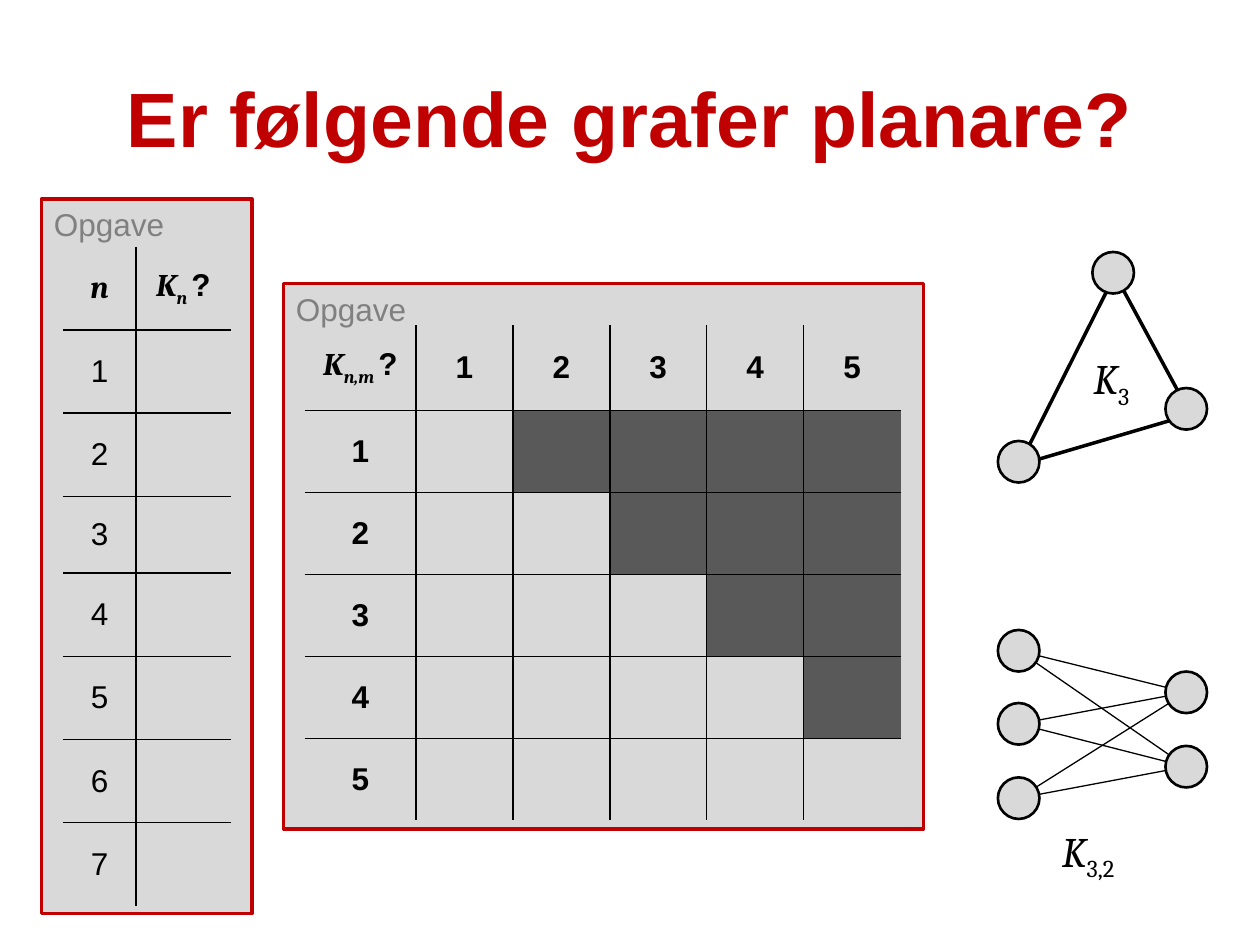
from itertools import product

from lxml.etree import SubElement
from pptx import Presentation
from pptx.dml.color import RGBColor
from pptx.enum.shapes import MSO_CONNECTOR, MSO_SHAPE
from pptx.enum.text import MSO_ANCHOR, PP_ALIGN
from pptx.oxml.ns import qn
from pptx.util import Inches, Pt

RED = RGBColor(0xC0, 0x00, 0x00)
BLACK = RGBColor(0x00, 0x00, 0x00)
LIGHT = RGBColor(0xD9, 0xD9, 0xD9)
GREY = RGBColor(0x80, 0x80, 0x80)
DARK = RGBColor(0x59, 0x59, 0x59)

TITLE = "Er følgende grafer planare?"
PANEL_LABEL = "Opgave"
PANELS = [(2.25, 2.25, 5.08, 4.33), (0.33, 1.58, 1.67, 5.67)]

# A cell is a list of (text, style) spans; styles: b bold, m math, s subscript
COMPLETE_ROWS = [[[("n", "bm")], [("K", "bm"), ("n ", "bms"), ("?", "b")]]]
COMPLETE_ROWS += [[[(str(n), "")], []] for n in range(1, 8)]
BIPARTITE_ROWS = [[[("K", "bm"), ("n,m ", "bms"), ("?", "b")]]
                  + [[(str(m), "b")] for m in range(1, 6)]]
BIPARTITE_ROWS += [[[(str(n), "b")]] + [[]] * 5 for n in range(1, 6)]

NODE_SIZE = 0.33
TRIANGLE = [(8.09, 3.69), (8.85, 2.18), (9.45, 3.29)]
TRIANGLE_NODES = [(8.67, 2), (9.25, 3.08), (7.92, 3.5)]
LEFT_NODES = [(7.92, 5), (7.92, 5.58), (7.92, 6.17)]
RIGHT_NODES = [(9.25, 5.33), (9.25, 5.92)]
GRAPH_LABELS = [((8.58, 2.75), "3"), ((8.33, 6.5), "3,2")]


def add_span(para, text, size, style="", color=BLACK):
    span = para.add_run()
    span.text = text
    span.font.size = Pt(size)
    span.font.name = "Cambria" if "m" in style else "Arial"
    span.font.bold = "b" in style
    span.font.italic = "m" in style
    span.font.color.rgb = color
    if "s" in style:
        span.font.italic = "b" in style
        span._r.get_or_add_rPr().set("baseline", "-25000")


def add_filled(slide, kind, position, fill, line, width):
    shape = slide.shapes.add_shape(kind, *map(Inches, position))
    shape.shadow.inherit = False
    shape.fill.solid()
    shape.fill.fore_color.rgb = fill
    shape.line.color.rgb = line
    shape.line.width = Pt(width)
    return shape


def add_panel(slide, position):
    panel = add_filled(slide, MSO_SHAPE.RECTANGLE, position, LIGHT, RED, 2)
    panel.text_frame.vertical_anchor = MSO_ANCHOR.TOP
    para = panel.text_frame.paragraphs[0]
    para.alignment = PP_ALIGN.LEFT
    add_span(para, PANEL_LABEL, 18, color=GREY)


def add_node(slide, corner):
    add_filled(slide, MSO_SHAPE.OVAL, (*corner, NODE_SIZE, NODE_SIZE), LIGHT, BLACK, 1.5)


def set_borders(cell, visible):
    """Draw the sides L, R, T and B that are visible and clear the others."""
    properties = cell._tc.get_or_add_tcPr()
    for side, shown in visible.items():
        line = SubElement(properties, qn(f"a:ln{side}"), w=str(Pt(1)))
        if shown:
            fill = SubElement(line, qn("a:solidFill"))
            SubElement(fill, qn("a:srgbClr"), val=str(BLACK))
        else:
            SubElement(line, qn("a:noFill"))


def add_grid(slide, rows, corner, widths, heights, is_dark):
    """Add a table that is ruled between its cells but open at its outside."""
    last_row, last_column = len(rows) - 1, len(widths) - 1
    frame = slide.shapes.add_table(
        len(rows), len(widths), *map(Inches, (*corner, sum(widths), sum(heights))))
    table = frame.table
    table.first_row = table.horz_banding = False
    for column, width in zip(table.columns, widths):
        column.width = Inches(width)
    for row, height in zip(table.rows, heights):
        row.height = Inches(height)
    for r, c in product(range(len(rows)), range(len(widths))):
        cell = table.cell(r, c)
        set_borders(cell, {"L": c > 0, "R": c < last_column,
                           "T": r > 0, "B": r < last_row})
        if is_dark(r, c):
            cell.fill.solid()
            cell.fill.fore_color.rgb = DARK
        else:
            cell.fill.background()
        cell.vertical_anchor = MSO_ANCHOR.MIDDLE
        para = cell.text_frame.paragraphs[0]
        para.alignment = PP_ALIGN.CENTER
        for text, style in rows[r][c]:
            add_span(para, text, 18, style)


def add_edge(slide, start, end):
    """Join the centres of two nodes given by their corners."""
    ends = [Inches(value + NODE_SIZE / 2) for value in (*start, *end)]
    edge = slide.shapes.add_connector(MSO_CONNECTOR.STRAIGHT, *ends)
    edge.line.color.rgb = BLACK
    edge.line.width = Pt(0.75)
    SubElement(edge._element.spPr, qn("a:effectLst"))


def add_triangle(slide):
    first, *others = [(Inches(x), Inches(y)) for x, y in TRIANGLE]
    builder = slide.shapes.build_freeform(*first)
    builder.add_line_segments(others, close=True)
    triangle = builder.convert_to_shape()
    triangle.shadow.inherit = False
    triangle.fill.background()
    triangle.line.color.rgb = BLACK
    triangle.line.width = Pt(2)


def add_graph_label(slide, corner, subscript):
    box = slide.shapes.add_textbox(*map(Inches, (*corner, 0.92, 0.5)))
    box.text_frame.word_wrap = True
    para = box.text_frame.paragraphs[0]
    add_span(para, "K", 24, "m")
    add_span(para, subscript, 24, "ms")


def main():
    deck = Presentation()
    deck.slide_width, deck.slide_height = Inches(10), Inches(7.5)
    slide = deck.slides.add_slide(deck.slide_layouts[5])

    title = slide.shapes.title
    title.left, title.top, title.width, title.height = map(Inches, (0.5, 0.3, 9, 1.25))
    title.text_frame.vertical_anchor = MSO_ANCHOR.MIDDLE
    para = title.text_frame.paragraphs[0]
    para.alignment = PP_ALIGN.CENTER
    add_span(para, TITLE, 44, "b", RED)

    for position in PANELS:
        add_panel(slide, position)
    add_grid(slide, COMPLETE_ROWS, (0.5, 1.96), [0.58, 0.75],
             [0.66] * 3 + [0.61] + [0.66] * 4, lambda r, c: False)
    add_grid(slide, BIPARTITE_ROWS, (2.42, 2.58), [0.88] + [0.77] * 5,
             [0.68] + [0.65] * 5, lambda r, c: 0 < r < c)

    add_triangle(slide)
    for start, end in product(LEFT_NODES, RIGHT_NODES):
        add_edge(slide, start, end)
    for corner in TRIANGLE_NODES + LEFT_NODES + RIGHT_NODES:
        add_node(slide, corner)
    for corner, subscript in GRAPH_LABELS:
        add_graph_label(slide, corner, subscript)

    deck.save("out.pptx")


if __name__ == "__main__":
    main()
